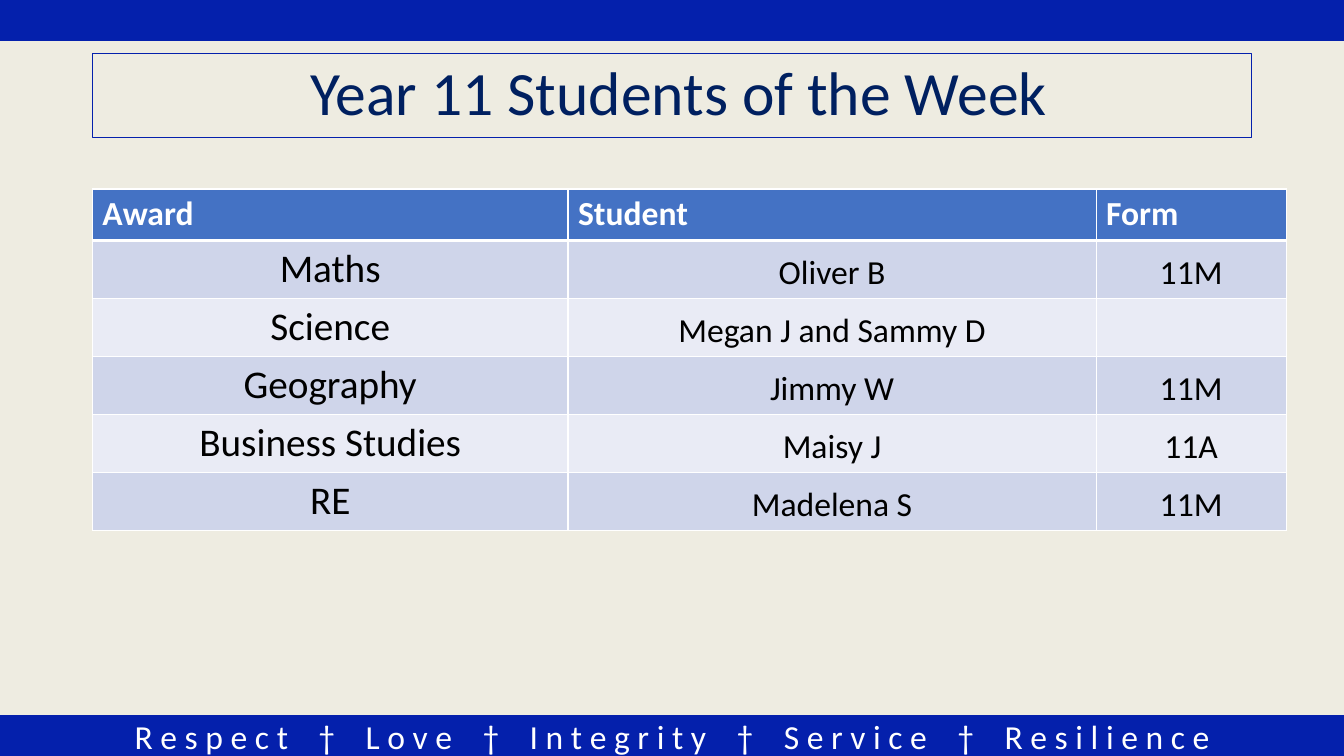
from lxml.etree import SubElement
from pptx import Presentation
from pptx.dml.color import RGBColor
from pptx.enum.shapes import MSO_SHAPE as Shape
from pptx.enum.text import MSO_ANCHOR as Anchor, PP_ALIGN as Align
from pptx.oxml.ns import qn
from pptx.util import Pt

EMU_PER_PX = 9525
SLIDE_WIDTH, SLIDE_HEIGHT = 1280, 720
BAR_HEIGHT = 38
FONT = "Calibri"
COLOURS = {
    "background": "EEECE1",
    "bar": "0420AC",
    "title": "002060",
    "header": "4472C4",
    "odd row": "CFD5EA",
    "even row": "E9EBF5",
    "white": "FFFFFF",
    "black": "000000",
}
VALUES = ["Respect", "Love", "Integrity", "Service", "Resilience"]
HEADINGS = ["Award", "Student", "Form"]
AWARDS = [
    ["Maths", "Oliver B", "11M"],
    ["Science", "Megan J and Sammy D", ""],
    ["Geography", "Jimmy W", "11M"],
    ["Business Studies", "Maisy J", "11A"],
    ["RE", "Madelena S", "11M"],
]
COLUMN_WIDTHS = [453, 503, 181]
HEADER_HEIGHT, ROW_HEIGHT = 49, 55


def px(length):
    return length * EMU_PER_PX


def colour(name):
    return RGBColor.from_string(COLOURS[name])


def fill_solid(fill, name):
    fill.solid()
    fill.fore_color.rgb = colour(name)


def set_font(para, size, name, bold=False):
    para.font.name = FONT
    para.font.size = Pt(size)
    para.font.bold = bold
    para.font.color.rgb = colour(name)


def add_bar(slide, box):
    bar = slide.shapes.add_shape(Shape.RECTANGLE, *map(px, box))
    bar.shadow.inherit = False
    fill_solid(bar.fill, "bar")
    bar.line.color.rgb = colour("bar")
    bar.line.width = Pt(1)
    return bar


def add_values_bar(slide, box):
    """Add a bar of letter-spaced school values with wide gaps around the daggers."""
    frame = add_bar(slide, box).text_frame
    frame.vertical_anchor = Anchor.MIDDLE
    frame.margin_top = frame.margin_bottom = 0
    para = frame.paragraphs[0]
    para.alignment = Align.CENTER
    set_font(para, 24, "white")
    for index, value in enumerate(VALUES):
        pieces = [" ", "†", " "] if index else []
        for piece in pieces + [" ".join(value)]:
            span = para.add_run()
            span.text = piece
            if piece == " ":
                span.font._element.set("spc", "1630")


def place_title(slide, box):
    title = slide.shapes.title
    title.left, title.top, title.width, title.height = map(px, box)
    title.line.color.rgb = colour("bar")
    title.line.width = Pt(0.75)
    frame = title.text_frame
    frame.text = " Year 11 Students of the Week"
    frame.vertical_anchor = Anchor.MIDDLE
    para = frame.paragraphs[0]
    para.alignment = Align.CENTER
    para.line_spacing = 0.9
    set_font(para, 44, "title")


def add_borders(cell, row):
    """Draw white cell borders, with a thicker rule under the header row."""
    properties = cell._tc.get_or_add_tcPr()
    widths = {"lnL": 1, "lnR": 1, "lnT": 3 if row == 1 else 1, "lnB": 3 if row == 0 else 1}
    for side, width in widths.items():
        line = SubElement(properties, qn(f"a:{side}"), w=str(Pt(width)))
        fill = SubElement(line, qn("a:solidFill"))
        SubElement(fill, qn("a:srgbClr"), val=COLOURS["white"])


def format_cell(cell, row, column):
    add_borders(cell, row)
    para = cell.text_frame.paragraphs[0]
    if row == 0:
        fill_solid(cell.fill, "header")
        set_font(para, 24, "white", bold=True)
        return
    fill_solid(cell.fill, "odd row" if row % 2 else "even row")
    para.alignment = Align.CENTER
    set_font(para, 24 if column else 28, "black")
    if column:
        cell.vertical_anchor = Anchor.BOTTOM
        cell.margin_left = cell.margin_right = cell.margin_top = px(1)
        cell.margin_bottom = px(5)


def add_awards_table(slide, left, top):
    rows = [HEADINGS] + AWARDS
    heights = [HEADER_HEIGHT] + [ROW_HEIGHT] * len(AWARDS)
    box = left, top, sum(COLUMN_WIDTHS), sum(heights)
    table = slide.shapes.add_table(len(rows), len(HEADINGS), *map(px, box)).table
    for column, width in zip(table.columns, COLUMN_WIDTHS):
        column.width = px(width)
    for row, (texts, height) in enumerate(zip(rows, heights)):
        table.rows[row].height = px(height)
        for column, text in enumerate(texts):
            cell = table.cell(row, column)
            cell.text = text
            format_cell(cell, row, column)


def build_awards_slide(deck):
    slide = deck.slides.add_slide(deck.slide_layouts[5])
    fill_solid(slide.background.fill, "background")
    add_values_bar(slide, (0, SLIDE_HEIGHT - BAR_HEIGHT, SLIDE_WIDTH, BAR_HEIGHT))
    add_bar(slide, (0, 0, SLIDE_WIDTH, BAR_HEIGHT))
    place_title(slide, (88, 51, 1104, 80))
    add_awards_table(slide, 88, 180)


def main():
    deck = Presentation()
    deck.slide_width, deck.slide_height = px(SLIDE_WIDTH), px(SLIDE_HEIGHT)
    build_awards_slide(deck)
    deck.save("out.pptx")


if __name__ == "__main__":
    main()
